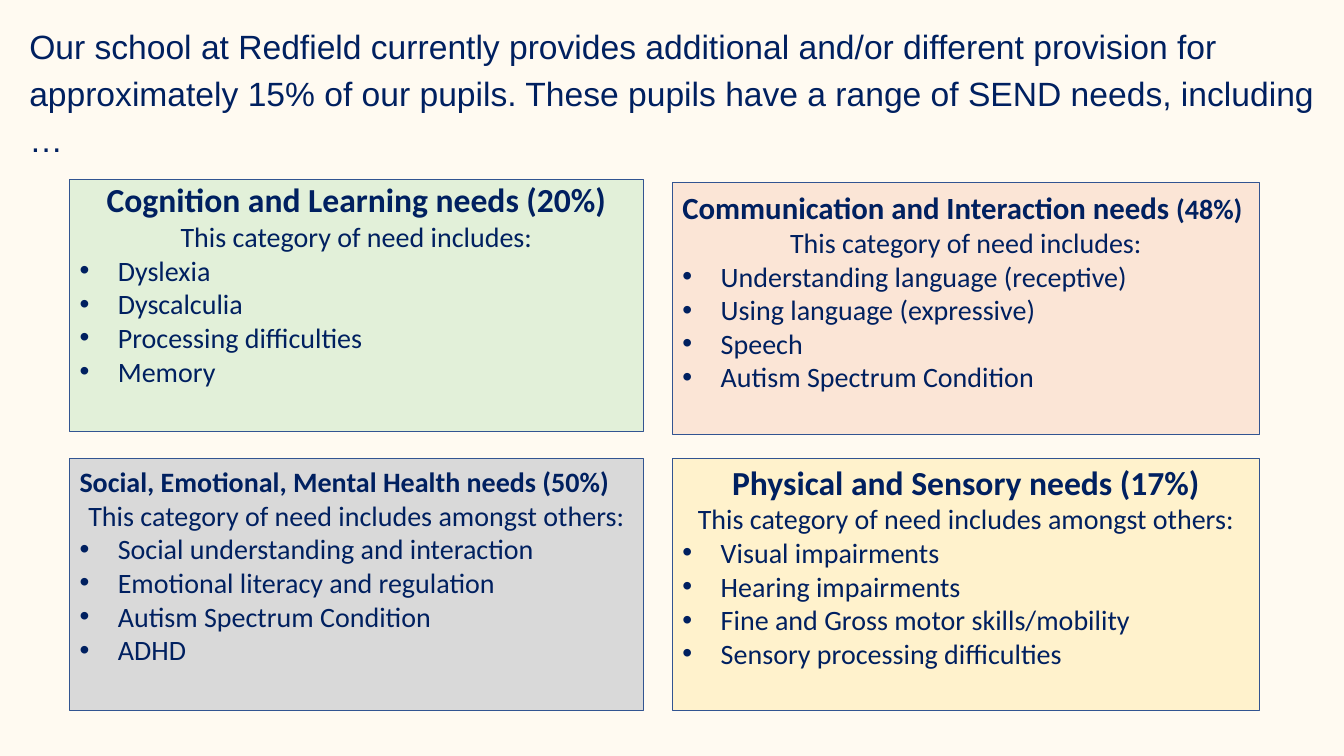
from dataclasses import dataclass

from lxml import etree
from pptx import Presentation
from pptx.dml.color import RGBColor
from pptx.enum.shapes import MSO_SHAPE
from pptx.enum.text import MSO_ANCHOR, MSO_AUTO_SIZE, PP_ALIGN
from pptx.oxml.ns import qn
from pptx.util import Inches, Pt

RECTANGLE = MSO_SHAPE.RECTANGLE
TOP = MSO_ANCHOR.TOP
LEFT, CENTER = PP_ALIGN.LEFT, PP_ALIGN.CENTER

CREAM = RGBColor(0xFF, 0xFA, 0xF1)
NAVY = RGBColor(0x00, 0x20, 0x60)
BORDER_BLUE = RGBColor(0x32, 0x54, 0x91)
GREEN = RGBColor(0xE2, 0xF0, 0xD9)
PEACH = RGBColor(0xFB, 0xE5, 0xD6)
GREY = RGBColor(0xD9, 0xD9, 0xD9)
YELLOW = RGBColor(0xFF, 0xF2, 0xCC)

BODY_SIZE = 20
BULLET_INDENT = 0.38
CARD_HEIGHT = 2.5
COLUMNS = ((0.69, 5.69), (6.67, 5.82))  # left, width
LOWER_TOP = 4.55

INTRO = (
    "Our school at Redfield currently provides additional and/or different "
    "provision for approximately 15% of our pupils. These pupils have a range "
    "of SEND needs, including …"
)


@dataclass(frozen=True)
class NeedCard:
    column: int
    top: float
    text_inset: float
    fill: RGBColor
    heading: str
    share: str
    heading_size: int
    heading_align: PP_ALIGN
    lead: str
    needs: tuple[str, ...]


INCLUDES = "This category of need includes:"
INCLUDES_OTHERS = "This category of need includes amongst others:"

CARDS = (
    NeedCard(0, 1.78, 0, GREEN, "Cognition and Learning needs ", "(20%)", 24, CENTER, INCLUDES,
             ("Dyslexia", "Dyscalculia", "Processing difficulties", "Memory")),
    NeedCard(1, 1.81, 0.06, PEACH, "Communication and Interaction needs ", "(48%)", 22, LEFT, INCLUDES,
             ("Understanding language (receptive)", "Using language (expressive)",
              "Speech", "Autism Spectrum Condition")),
    NeedCard(0, LOWER_TOP, 0.06, GREY, "Social, Emotional, Mental Health needs ", "(50%)", 20, LEFT,
             INCLUDES_OTHERS,
             ("Social understanding and interaction", "Emotional literacy and regulation",
              "Autism Spectrum Condition", "ADHD")),
    NeedCard(1, LOWER_TOP, 0.03, YELLOW, "Physical and Sensory needs ", "(17%)", 24, CENTER,
             INCLUDES_OTHERS,
             ("Visual impairments", "Hearing impairments",
              "Fine and Gross motor skills/mobility", "Sensory processing difficulties")),
)


def style_paragraph(para, size: int, align: PP_ALIGN, font_name: str = "Calibri",
                    bold: bool = False) -> None:
    para.alignment = align
    para.font.name = font_name
    para.font.size = Pt(size)
    para.font.bold = bold
    para.font.color.rgb = NAVY


def add_bullet(para) -> None:
    properties = para._p.get_or_add_pPr()
    properties.set("marL", str(Inches(BULLET_INDENT)))
    properties.set("indent", str(-Inches(BULLET_INDENT)))
    bullet_font = etree.Element(qn("a:buFont"), typeface="Arial")
    bullet = etree.Element(qn("a:buChar"), char="•")
    properties.insert(0, bullet_font)
    bullet_font.addnext(bullet)


def add_title(page) -> None:
    title = page.shapes.title
    title.left, title.top = Inches(0.19), Inches(0.15)
    title.width, title.height = Inches(12.95), Inches(1.45)
    frame = title.text_frame
    frame.text = INTRO
    frame.word_wrap = True
    frame.auto_size = MSO_AUTO_SIZE.SHAPE_TO_FIT_TEXT
    frame.vertical_anchor = TOP
    para = frame.paragraphs[0]
    style_paragraph(para, 24, LEFT, "Arial")
    para.line_spacing = 1.15
    para.space_after = Pt(6)


def add_card(page, card: NeedCard) -> None:
    left, width = COLUMNS[card.column]
    box = page.shapes.add_shape(RECTANGLE, Inches(left), Inches(card.top),
                                Inches(width), Inches(CARD_HEIGHT))
    box.shadow.inherit = False
    box.fill.solid()
    box.fill.fore_color.rgb = card.fill
    box.line.color.rgb = BORDER_BLUE
    box.line.width = Pt(1)

    frame = box.text_frame
    frame.word_wrap = True
    frame.vertical_anchor = TOP
    frame.margin_top = Inches(card.text_inset)

    # Heading with the share of pupils
    heading = frame.paragraphs[0]
    style_paragraph(heading, card.heading_size, card.heading_align, bold=True)
    heading.add_run().text = card.heading
    share = heading.add_run()
    share.text = card.share
    if card.heading_size == 22:
        share.font.size = Pt(BODY_SIZE)

    # Lead-in and list of needs
    lead = frame.add_paragraph()
    lead.text = card.lead
    style_paragraph(lead, BODY_SIZE, CENTER)
    for need in card.needs:
        para = frame.add_paragraph()
        para.text = need
        style_paragraph(para, BODY_SIZE, LEFT)
        add_bullet(para)


def main() -> None:
    deck = Presentation()
    deck.slide_width, deck.slide_height = Inches(13.33), Inches(7.5)
    page = deck.slides.add_slide(deck.slide_layouts[5])
    page.background.fill.solid()
    page.background.fill.fore_color.rgb = CREAM
    add_title(page)
    for card in CARDS:
        add_card(page, card)
    deck.save("out.pptx")


if __name__ == "__main__":
    main()
